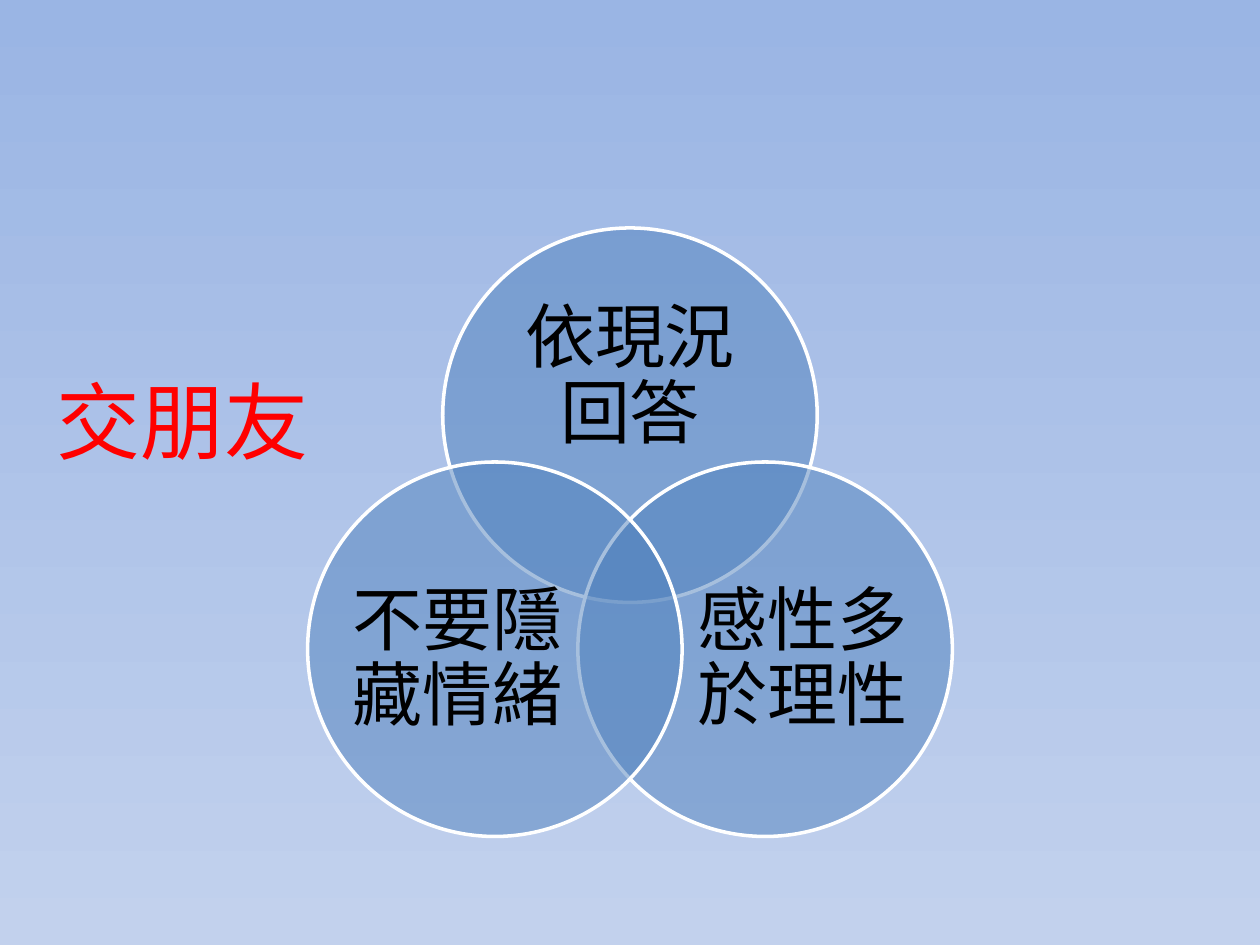
from math import cos, radians, sin

from lxml.etree import SubElement
from pptx import Presentation
from pptx.dml.color import RGBColor
from pptx.enum.shapes import MSO_SHAPE
from pptx.enum.text import MSO_ANCHOR, PP_ALIGN
from pptx.oxml.ns import qn
from pptx.util import Pt

FONT = "Calibri"
COLORS = {
    "bg_top": "9AB5E4",
    "bg_bottom": "C2D1ED",
    "circle": "4F81BD",
    "outline": "FFFFFF",
    "text": "000000",
    "title": "FF0000",
}

# Label, angle around the centre, then label offset and size as shares of the diameter
CIRCLES = [
    ("依現況回答", -90, (0, -0.1), (0.73, 0.45)),
    ("感性多於理性", 30, (0.1, 0.03), (0.6, 0.55)),
    ("不要隱藏情緒", 150, (-0.1, 0.03), (0.6, 0.55)),
]


def rgb(name):
    return RGBColor.from_string(COLORS[name])


def set_background(s):
    fill = s.background.fill
    fill.gradient()
    fill.gradient_angle = 270
    for stop, name in zip(fill.gradient_stops, ("bg_top", "bg_bottom")):
        stop.color.rgb = rgb(name)
    fill.gradient_stops[0].position = 0
    fill.gradient_stops[1].position = 1


def format_text(tf, text, size, color, align, anchor):
    tf.word_wrap = True
    tf.vertical_anchor = anchor
    p = tf.paragraphs[0]
    p.text = text
    p.alignment = align
    p.font.size = Pt(size)
    p.font.name = FONT
    p.font.color.rgb = rgb(color)
    return p


def add_title(s, text, left, top, width, height):
    sp = s.shapes.title
    sp.left, sp.top, sp.width, sp.height = map(Pt, (left, top, width, height))
    format_text(sp.text_frame, text, 48, "title", PP_ALIGN.LEFT, MSO_ANCHOR.TOP)


def add_circle(s, cx, cy, diameter):
    sp = s.shapes.add_shape(
        MSO_SHAPE.OVAL, Pt(cx - diameter / 2), Pt(cy - diameter / 2),
        Pt(diameter), Pt(diameter))
    sp.shadow.inherit = False
    sp.fill.solid()
    sp.fill.fore_color.rgb = rgb("circle")
    # Half-transparent fill
    color = sp.fill._xPr.find(qn("a:solidFill"))[0]
    SubElement(color, qn("a:alpha"), val="50000")
    sp.line.color.rgb = rgb("outline")
    sp.line.width = Pt(2)


def add_label(s, text, cx, cy, width, height):
    sp = s.shapes.add_textbox(
        Pt(cx - width / 2), Pt(cy - height / 2), Pt(width), Pt(height))
    tf = sp.text_frame
    tf.margin_left = tf.margin_right = tf.margin_top = tf.margin_bottom = 0
    p = format_text(tf, text, 40, "text", PP_ALIGN.CENTER, MSO_ANCHOR.MIDDLE)
    p.line_spacing = 0.9


def add_venn(s, left, top, width, height):
    # Circle centres lie on a ring of 5/12 of the diameter, 120 degrees apart
    diameter = height / 1.625
    ring = diameter * 5 / 12
    center_x = left + width / 2
    center_y = top + diameter / 2 + ring
    for text, angle, (dx, dy), (w, h) in CIRCLES:
        cx = center_x + ring * cos(radians(angle))
        cy = center_y + ring * sin(radians(angle))
        add_circle(s, cx, cy, diameter)
        add_label(s, text, cx + dx * diameter, cy + dy * diameter,
                  w * diameter, h * diameter)


def main():
    prs = Presentation()
    prs.slide_width, prs.slide_height = Pt(720), Pt(540)
    s = prs.slides.add_slide(prs.slide_layouts[5])
    set_background(s)
    add_venn(s, 175.5, 130.25, 369, 347.75)
    add_title(s, "交朋友", 25, 207.5, 160, 65.5)
    prs.save("out.pptx")


if __name__ == "__main__":
    main()
